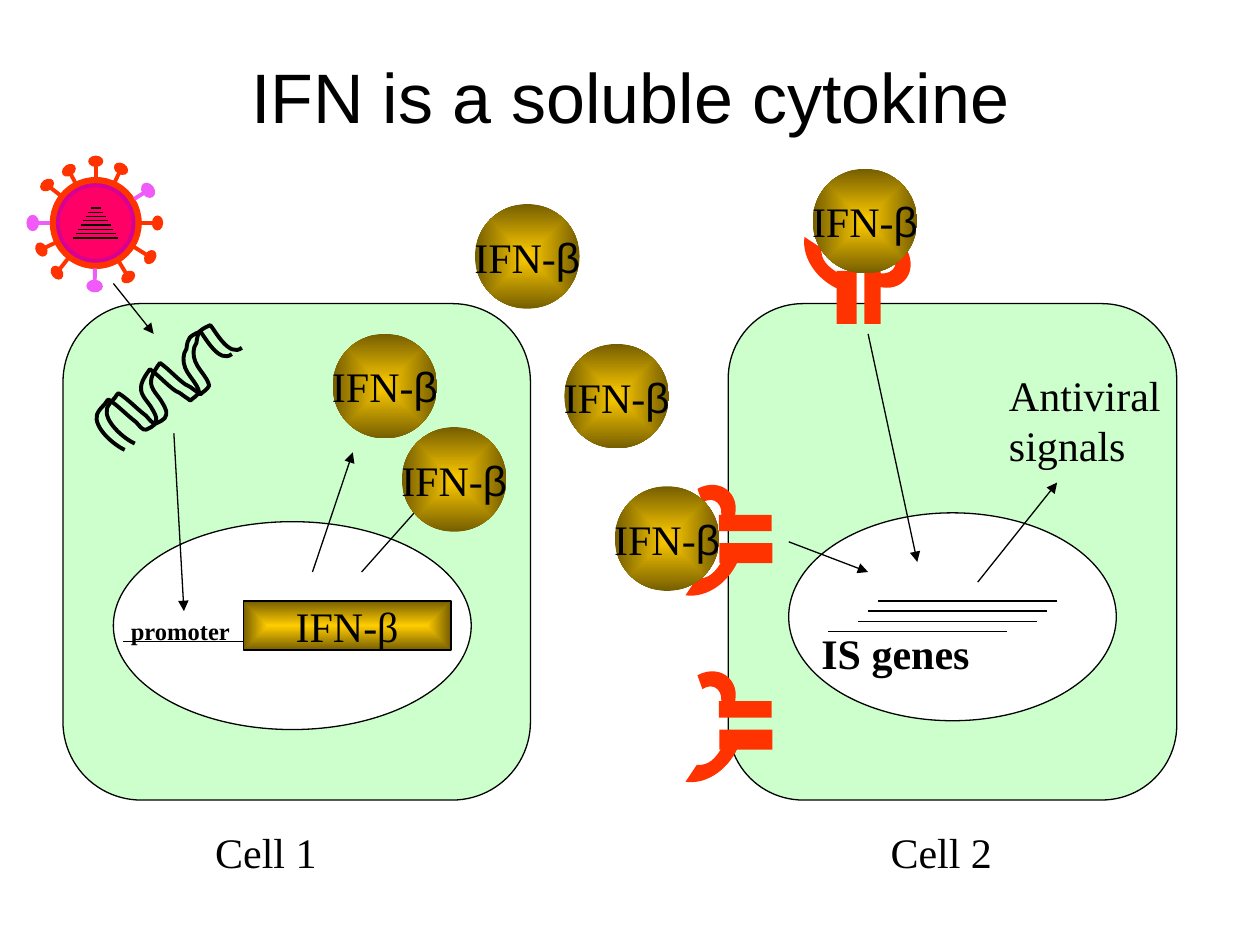
"""Draw how interferon made by one cell warns its neighbour."""
import math
import typing
from dataclasses import dataclass

import pptx
import pptx.dml.color
import pptx.enum.shapes
import pptx.enum.text
import pptx.oxml
import pptx.oxml.ns
import pptx.util

Kind = pptx.enum.shapes.MSO_SHAPE
Align = pptx.enum.text.PP_ALIGN
Mid = pptx.enum.text.MSO_ANCHOR.MIDDLE
Point = tuple[float, float]
Steps = list[tuple[float, ...]]
BLACK, WHITE, RED, PINK, MINT = "000000", "FFFFFF", "FF3300", "F05AF8", "CCFFCC"
GOLD = ("FFCC00", "765E00")
SERIF, SANS = "Times New Roman", "Arial"
COLS = 100
NAMES = pptx.oxml.ns.nsdecls("a")

deck = pptx.Presentation()
deck.slide_width, deck.slide_height = pptx.util.Inches(10), pptx.util.Inches(7.5)
slide = deck.slides.add_slide(deck.slide_layouts[5])


@dataclass
class Box:
    """A place on the grid, in columns and rows of equal size."""
    col: float
    row: float
    cols: float
    rows: float

    def emu(self) -> list[int]:
        """Give the place in slide units."""
        return [unit(n) for n in (self.col, self.row, self.cols, self.rows)]


@dataclass
class Spike:
    """A virus spike: clock angle, tilt of its knob, reach and colour."""
    angle: float
    tilt: float
    reach: float = 4.9
    hue: str = RED


@dataclass
class Curve:
    """An outline of points and cubic curves in a turned frame."""
    mid: Point
    cols: float
    rows: float
    turn: float
    steps: Steps


@dataclass
class Half:
    """Half a receptor lying on its side: bar thickness and arm."""
    thick: float
    arm: Curve


def unit(count: float) -> int:
    """Turn grid cells into slide units."""
    return round(count * deck.slide_width / COLS)


def color(code: str) -> pptx.dml.color.RGBColor:
    """Turn a hex string into a colour."""
    return pptx.dml.color.RGBColor.from_string(code)


def say(frame: typing.Any, text: str, size: float = 24, face: str = SERIF,
        beta: str = "", bold: bool = False, align: typing.Any = Align.LEFT,
        wrap: bool = False, anchor: typing.Any = None) -> None:
    """Write text, with its beta in a face of its own if one is given."""
    frame.word_wrap = wrap
    if anchor is not None:
        frame.vertical_anchor = anchor
    para = frame.paragraphs[0]
    para.alignment = align
    parts = ((text.rstrip("β"), face), ("β", beta)) if beta else ((text, face),)
    for part, name in parts:
        run = para.add_run()
        run.text = part
        run.font.size, run.font.name = pptx.util.Pt(size), name
        run.font.bold, run.font.color.rgb = bold, color(BLACK)


def paint(shape: typing.Any, fill: str = "", edge: str = "", width: float = 0.75) -> None:
    """Set a plain fill and edge, either of which may be absent."""
    shape.shadow.inherit = False
    for side, code in ((shape.fill, fill), (shape.line.fill, edge)):
        if code:
            side.solid()
            side.fore_color.rgb = color(code)
        else:
            side.background()
    if edge:
        shape.line.width = pptx.util.Pt(width)


def gild(shape: typing.Any) -> None:
    """Shade a shape from a bright centre to a dark rim."""
    shape.fill.gradient()
    for stop, code in zip(shape.fill.gradient_stops, GOLD):
        stop.color.rgb = color(code)
    grad = shape._element.spPr.find(pptx.oxml.ns.qn("a:gradFill"))
    grad.remove(grad.find(pptx.oxml.ns.qn("a:lin")))
    grad.append(pptx.oxml.parse_xml(
        f'<a:path {NAMES} path="shape">'
        '<a:fillToRect l="50000" t="50000" r="50000" b="50000"/></a:path>'))


def form(kind: typing.Any, box: Box, fill: str = "", edge: str = "",
         width: float = 0.75, turn: float = 0) -> typing.Any:
    """Add a preset shape."""
    shape = slide.shapes.add_shape(kind, *box.emu())
    paint(shape, fill, edge, width)
    shape.rotation = turn
    return shape


def label(text: str, box: Box, **style: typing.Any) -> None:
    """Add a text box."""
    say(slide.shapes.add_textbox(*box.emu()).text_frame, text, **style)


def line(start: Point, end: Point, hue: str = BLACK, width: float = 0.75,
         head: bool = False) -> None:
    """Add a straight line, with an arrowhead at its end on demand."""
    link = slide.shapes.add_connector(pptx.enum.shapes.MSO_CONNECTOR.STRAIGHT,
                                      *(unit(n) for n in start + end))
    link.line.color.rgb, link.line.width = color(hue), pptx.util.Pt(width)
    props = link._element.spPr
    if head:
        props.find(pptx.oxml.ns.qn("a:ln")).append(
            pptx.oxml.parse_xml(f'<a:tailEnd {NAMES} type="triangle"/>'))
    props.append(pptx.oxml.parse_xml(f"<a:effectLst {NAMES}/>"))


def bend(curve: Curve, mid: Point, spin: float = 0, close: bool = False,
         **style: typing.Any) -> None:
    """Add a curved outline with its frame centred on a point."""
    left, top = mid[0] - curve.cols / 2, mid[1] - curve.rows / 2
    maker = slide.shapes.build_freeform(unit(left), unit(top))
    maker.add_line_segments([(unit(left + curve.cols), unit(top + curve.rows))], close=False)
    shape = maker.convert_to_shape()
    track = shape._element.spPr.find(".//" + pptx.oxml.ns.qn("a:path"))
    for old in list(track):
        track.remove(old)
    rad = math.radians(curve.turn)
    for i, step in enumerate(curve.steps):
        dots = ""
        for x, y in zip(step[::2], step[1::2]):
            dx, dy = x - curve.mid[0], y - curve.mid[1]
            across = curve.cols / 2 + dx * math.cos(rad) + dy * math.sin(rad)
            down = curve.rows / 2 + dy * math.cos(rad) - dx * math.sin(rad)
            dots += f'<a:pt x="{unit(across)}" y="{unit(down)}"/>'
        tag = "moveTo" if i == 0 else "lnTo" if len(step) == 2 else "cubicBezTo"
        track.append(pptx.oxml.parse_xml(f"<a:{tag} {NAMES}>{dots}</a:{tag}>"))
    if close:
        track.append(pptx.oxml.parse_xml(f"<a:close {NAMES}/>"))
    paint(shape, **style)
    shape.rotation = curve.turn + spin


def ball(col: float, row: float) -> None:
    """Add one interferon molecule."""
    shape = form(Kind.OVAL, Box(col, row, 8.3, 8.3))
    gild(shape)
    say(shape.text_frame, "IFN-β", beta=SANS, align=Align.CENTER, anchor=Mid)


def prong(half: Half, col: float, row: float, spin: float = 270) -> None:
    """Add half a receptor around its bar's centre, lying or upright."""
    form(Kind.RECTANGLE, Box(col - half.thick / 2, row - 2.1, half.thick, 4.2), RED, turn=spin)
    x, y = half.arm.mid
    mid = (col + x, row + y) if spin else (col - y, row + x)
    bend(half.arm, mid, (spin + 90) % 360, close=True, fill=RED)


def cell(wall: Box, core: Box) -> None:
    """Add a cell with its nucleus."""
    form(Kind.ROUNDED_RECTANGLE, wall, MINT, BLACK).adjustments[0] = 0.167
    form(Kind.OVAL, core, WHITE, BLACK)


def virus(col: float, row: float) -> None:
    """Add the virus with its spikes and genome."""
    form(Kind.OVAL, Box(col - 3.6, row - 3.6, 7.2, 7.2), RED, RED)
    for spike in SPIKES:
        rad = math.radians(spike.angle)
        tip, foot = ((col + r * math.sin(rad), row - r * math.cos(rad))
                     for r in (spike.reach, 3.6))
        line(tip, foot, spike.hue, 2.25)
        form(Kind.OVAL, Box(tip[0] - 0.6, tip[1] - 0.45, 1.2, 0.9), spike.hue,
             spike.hue if spike.hue == PINK else "", turn=spike.tilt)
    form(Kind.OVAL, Box(col - 3, row - 3, 6, 6), "FF0066", "D60093", 2.25)
    for i in range(8):
        reach, y = 0.4 + 0.2 * i, row - 1.2 + 0.34 * i
        line((col - reach, y), (col + reach, y))


SPIKES = [Spike(0, 0), Spike(25, 30.3, 4.75), Spike(90, 92.4), Spike(181, 183, 5, PINK),
          Spike(270, 270, 5, PINK), Spike(58, 53.6, hue=PINK), Spike(122, 120.6, 5.1),
          Spike(308, 323.6), Spike(149, 143.6, 5), Spike(218, 53.6, 5),
          Spike(244, 59.7, 4.8), Spike(333, 143.6, 4.7)]
STRAND = Curve((12.9, 30.95), 12.2, 4.1, 323, [
    (9.9, 35.7), (9, 35.3, 7.4, 33.9, 7.7, 32.9), (7.8, 32.6, 8.1, 32.3, 8.3, 32.1),
    (8.4, 31.9, 8.6, 31.7, 8.6, 31.7), (9.4, 32.2, 10, 32.9, 10.8, 33.5),
    (11, 33.7, 11.3, 34.2, 11.6, 34.1), (11.7, 34, 11.9, 34, 12, 33.9),
    (12.2, 33.8, 12.4, 33.6, 12.4, 33.4), (12.5, 33.1, 12.1, 32.5, 12.1, 32.5),
    (11.8, 31.9, 11.1, 31.4, 11.2, 30.7), (11.2, 30.2, 11.9, 29.3, 11.9, 29.3),
    (12.6, 29.8, 13.2, 30.5, 13.9, 31), (14.2, 31.1, 14.4, 31.3, 14.7, 31.5),
    (14.9, 31.6, 15.1, 31.8, 15.1, 31.8), (15.3, 31.6, 15.7, 31.4, 15.8, 31.1),
    (15.8, 31, 15.7, 30.8, 15.6, 30.6), (15.3, 30.1, 14.9, 29.7, 14.7, 29.2),
    (14.5, 28.7, 14.5, 28.1, 14.8, 27.7), (14.9, 26.8, 15, 26.7, 15.9, 26.3),
    (16.3, 26.8, 17.4, 28.9, 18.4, 28.1)])
LONG = Half(1.6, Curve((-3.2, 0.75), 4.2, 6.5, 136.9, [
    (-1.9, 0.6), (-2.4, 1.5, -3, 2.1, -3.9, 2), (-4.8, 3.35),
    (-3, 3.6, -1.2, 2.2, -0.5, 0.3)]))
SHORT = Half(1.3, Curve((-3.15, -0.6), 4.2, 5.2, 43.1, [
    (-2, -0.3), (-1.8, -0.8, -1.9, -1.3, -2.2, -1.6), (-2.5, -1.9, -3, -1.9, -3.4, -1.6),
    (-3.8, -2.7), (-2.9, -3.2, -1.9, -3.1, -1.3, -2.5), (-0.7, -1.9, -0.6, -1, -1, 0)]))

title = slide.shapes.title
title.left, title.top, title.width, title.height = Box(5, 1.3, 90, 12.5).emu()
say(title.text_frame, "IFN is a soluble cytokine", size=40, face=SANS,
    align=Align.CENTER, wrap=True, anchor=Mid)

cell(Box(5, 24.1, 37.1, 39.4), Box(9, 41.4, 28.4, 16.5))
label("promoter", Box(9.4, 48.4, 9.9, 3.3), size=14, bold=True)
virus(7.6, 17.7)
for dx, dy in ((0, 0), (0.8, -0.5)):
    bend(STRAND, (STRAND.mid[0] + dx, STRAND.mid[1] + dy), edge=BLACK, width=2.25)
line((9, 22.5), (12.2, 26.5), head=True)
line((9.8, 50.9), (24, 50.9))
gene = form(Kind.RECTANGLE, Box(19.3, 47.7, 16.5, 3.9), edge=BLACK)
gild(gene)
say(gene.text_frame, "IFN-β", align=Align.CENTER, anchor=Mid)

cell(Box(57.8, 24.1, 35.6, 39.4), Box(62.6, 40.7, 26, 16.5))
label("IS genes", Box(64.2, 49.3, 13.8, 5), bold=True)
for i, left in enumerate((65.7, 68.1, 68.9, 69.7)):
    line((left, 50.1 - 0.8 * i), (left + 14.2, 50.1 - 0.8 * i))
for row in (41.5, 56.3):
    prong(LONG, 59.2, row + 2.4)
    prong(SHORT, 59.15, row)
prong(LONG, 67.2, 23.6, spin=0)
prong(SHORT, 69.25, 23.6, spin=0)

for start, end in (((13.8, 34.4), (14.6, 48.5)), ((24.8, 45.4), (28, 35.9)),
                   ((28.7, 45.4), (34.3, 39.1)), ((68.9, 26.5), (72.8, 44.6)),
                   ((62.6, 43), (68.9, 45.4)), ((77.6, 46.2), (83.9, 38.3))):
    line(start, end, head=True)
for col, row in ((26.4, 26.5), (31.9, 33.9), (37.7, 16.2),
                 (44.8, 27.3), (48.8, 38.6), (64.5, 13.4)):
    ball(col, row)
for text, col in (("Cell 1", 16.1), ("Cell 2", 69.7)):
    label(text, Box(col, 65.1, 13.4, 5), wrap=True)
label("Antiviral signals", Box(79.1, 28.8, 15, 9), wrap=True)

deck.save("out.pptx")
